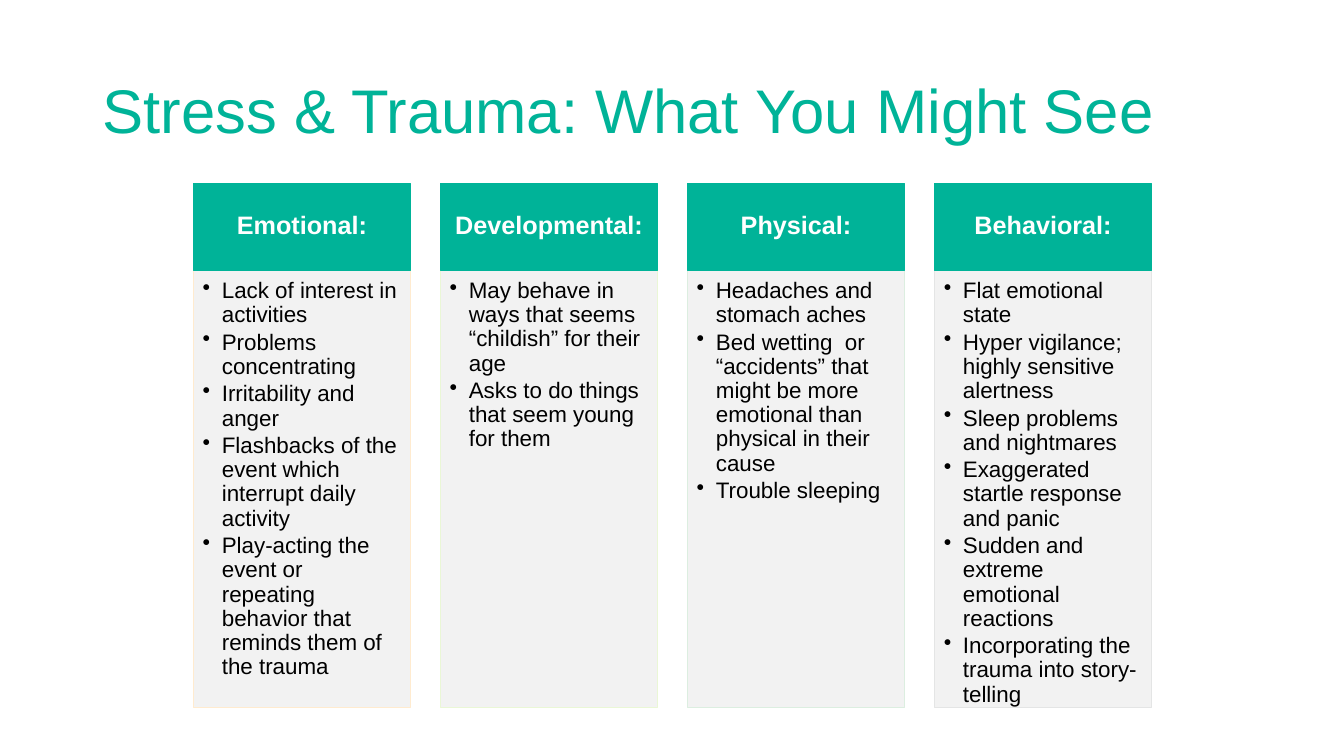
from lxml.etree import SubElement
from pptx import Presentation
from pptx.dml.color import RGBColor
from pptx.enum.shapes import MSO_SHAPE
from pptx.enum.text import MSO_ANCHOR, PP_ALIGN
from pptx.oxml.ns import qn
from pptx.util import Inches, Pt

GREEN = "00B398"
GREY = "F2F2F2"
LEFT, TOP, PITCH = 1.92, 1.82, 2.45
WIDTH, HEAD_HEIGHT, BODY_HEIGHT = 2.15, 0.86, 4.34

COLUMNS = [
    ("Emotional:", "FFEBCF", [
        "Lack of interest in activities",
        "Problems concentrating",
        "Irritability and anger",
        "Flashbacks of the event which interrupt daily activity",
        "Play-acting the event or repeating behavior that reminds them of the trauma",
    ]),
    ("Developmental:", "EAF7D6", [
        "May behave in ways that seems “childish” for their age",
        "Asks to do things that seem young for them",
    ]),
    ("Physical:", "DCEEE0", [
        "Headaches and stomach aches",
        "Bed wetting  or “accidents” that might be more emotional than physical in their cause",
        "Trouble sleeping",
    ]),
    ("Behavioral:", "E4E5E5", [
        "Flat emotional state",
        "Hyper vigilance; highly sensitive alertness",
        "Sleep problems and nightmares",
        "Exaggerated startle response and panic",
        "Sudden and extreme emotional reactions",
        "Incorporating the trauma into story-telling",
    ]),
]


def rgb(value):
    """Turn a hex string into a colour."""
    return RGBColor.from_string(value)


def add_bullet(p):
    """Give a paragraph a hanging round bullet."""
    pPr = p._p.get_or_add_pPr()
    pPr.set("marL", str(Inches(0.19)))
    pPr.set("indent", str(-Inches(0.19)))
    SubElement(pPr, qn("a:buChar"), char="•")


def write(tf, lines, size, color, bold=False, align=PP_ALIGN.LEFT, after=0,
          bullet=False, anchor=MSO_ANCHOR.TOP, insets=(0.1, 0.05, 0.1, 0.05)):
    """Fill a text frame with one paragraph per line."""
    tf.word_wrap = True
    tf.vertical_anchor = anchor
    tf.margin_left, tf.margin_top, tf.margin_right, tf.margin_bottom = map(Inches, insets)
    for i, line in enumerate(lines):
        p = tf.add_paragraph() if i else tf.paragraphs[0]
        p.alignment = align
        p.line_spacing = 0.9
        p.space_after = Pt(after)
        if bullet:
            p.level = 1
            add_bullet(p)
        r = p.add_run()
        r.text = line
        r.font.name = "Arial"
        r.font.size = Pt(size)
        r.font.bold = bold
        r.font.color.rgb = rgb(color)


def add_title(s, text):
    """Add the slide title."""
    sp = s.shapes.add_textbox(Inches(0.92), Inches(0.4), Inches(11.5), Inches(1.45))
    write(sp.text_frame, [text], size=44, color=GREEN, anchor=MSO_ANCHOR.MIDDLE)


def add_panel(s, x, y, height, fill, line):
    """Add a filled rectangle one column wide and return it."""
    sp = s.shapes.add_shape(MSO_SHAPE.RECTANGLE, Inches(x), Inches(y),
                            Inches(WIDTH), Inches(height))
    sp.shadow.inherit = False
    sp.fill.solid()
    sp.fill.fore_color.rgb = rgb(fill)
    sp.line.color.rgb = rgb(line)
    sp.line.width = Pt(0.75)
    return sp


def add_column(s, x, heading, outline, items):
    """Add a heading with its bulleted panel below."""
    body = add_panel(s, x, TOP + HEAD_HEIGHT, BODY_HEIGHT, GREY, outline)
    write(body.text_frame, items, size=16, color="000000", after=2.4, bullet=True,
          insets=(0.09, 0.09, 0.12, 0.14))
    head = add_panel(s, x, TOP, HEAD_HEIGHT, GREEN, GREEN)
    write(head.text_frame, [heading], size=18, color="FFFFFF", bold=True,
          align=PP_ALIGN.CENTER, anchor=MSO_ANCHOR.MIDDLE,
          insets=(0.13, 0.08, 0.13, 0.08))


def main():
    """Build and save the slide."""
    prs = Presentation()
    prs.slide_width, prs.slide_height = Inches(13.33), Inches(7.5)
    s = prs.slides.add_slide(prs.slide_layouts[6])
    add_title(s, "Stress & Trauma: What You Might See")
    for i, (heading, outline, items) in enumerate(COLUMNS):
        add_column(s, LEFT + i * PITCH, heading, outline, items)
    prs.save("out.pptx")


if __name__ == "__main__":
    main()
